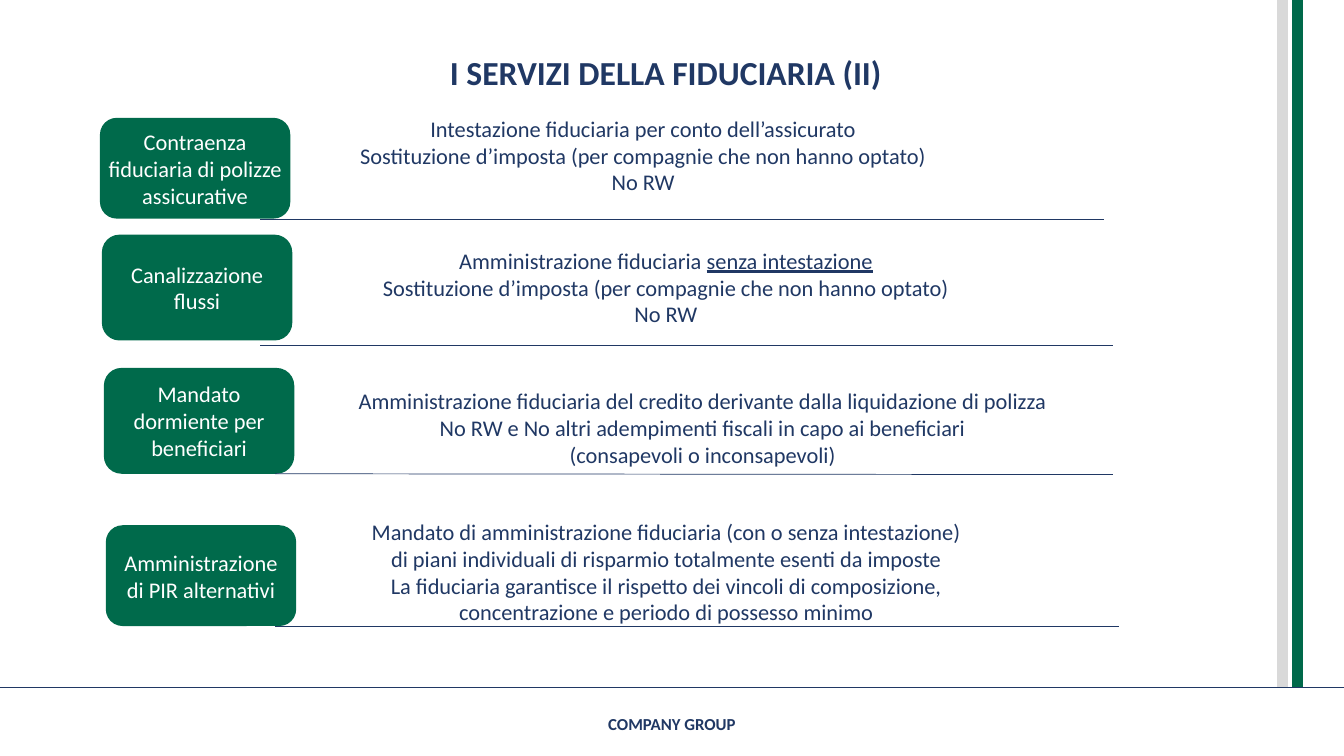
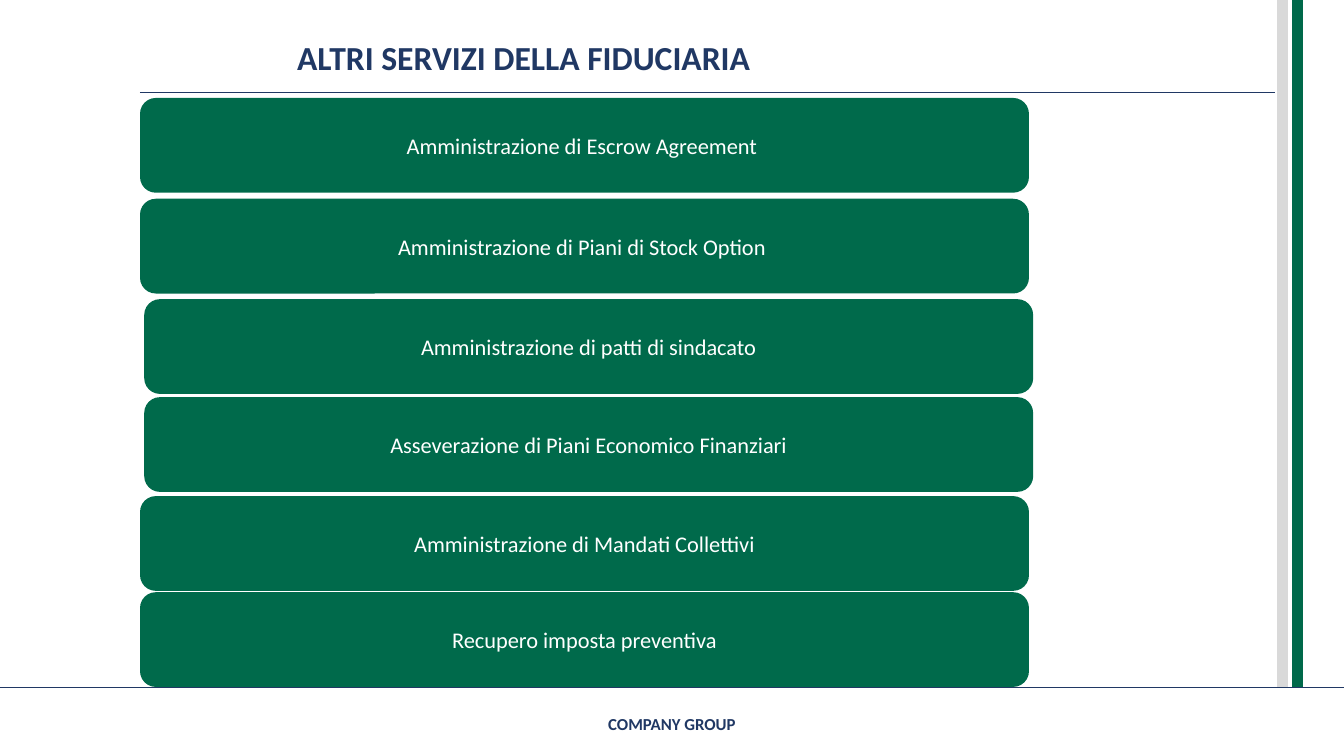
from lxml.etree import SubElement
from pptx import Presentation
from pptx.dml.color import RGBColor
from pptx.enum.shapes import MSO_CONNECTOR as Connector, MSO_SHAPE as Shape
from pptx.enum.text import MSO_ANCHOR as Anchor, PP_ALIGN as Align
from pptx.oxml.ns import qn
from pptx.util import Pt

# Shared style
FONT = "Calibri"
NAVY, GREEN, BAND_GREEN, GREY, WHITE = "203864", "006A4B", "00694A", "D9D9D9", "FFFFFF"
PAGE_WIDTH, PAGE_HEIGHT = 960, 540
FOOTER_TOP = 491
BODY_SIZE, TITLE_SIZE, FOOTER_SIZE = 16, 24, 12

# Service rows: label, button top and height, text box, text, rule (x1, y1, x2, y2).
# A line is a string, or a (plain, underlined) pair.
SERVICES = [
    (["Contraenza fiduciaria di polizze assicurative"], 84.2, 72,
     (243.4, 78.5, 432, 65.5),
     ["Intestazione fiduciaria per conto dell’assicurato",
      "Sostituzione d’imposta (per compagnie che non hanno optato)",
      "No RW"],
     (185.8, 157, 788.4, 157)),
    (["Canalizzazione flussi"], 167.6, 75.6,
     (260, 172.8, 431.3, 81.4),
     [("Amministrazione fiduciaria ", "senza intestazione"),
      "Sostituzione d’imposta (per compagnie che non hanno optato)",
      "No RW"],
     (185.8, 246.5, 795, 246.5)),
    (["Mandato dormiente per beneficiari"], 262.8, 75.6,
     (234, 272.9, 535.7, 65.5),
     ["Amministrazione fiduciaria del credito derivante dalla liquidazione di polizza",
      "No RW e No altri adempimenti fiscali in capo ai beneficiari",
      "(consapevoli o inconsapevoli)"],
     (196.6, 338.4, 795, 339)),
    (["Amministrazione", "di PIR alternativi"], 375.2, 72,
     (221, 366.5, 509.8, 100.8),
     ["Mandato di amministrazione fiduciaria (con o senza intestazione)",
      "di piani individuali di risparmio totalmente esenti da imposte",
      "La fiduciaria garantisce il rispetto dei vincoli di composizione,\v"
      "concentrazione e periodo di possesso minimo"],
     (196.6, 447.6, 799.2, 447.6)),
]

# Bars of the second slide: text, left, top
OTHER_SERVICES = [
    ("Amministrazione di Escrow Agreement ", 100, 70),
    ("Amministrazione di Piani di Stock Option ", 100, 142),
    ("Amministrazione di patti di sindacato", 103, 213.7),
    ("Asseverazione di Piani Economico Finanziari", 103, 283.7),
    ("Amministrazione di Mandati Collettivi", 100, 354.4),
    ("Recupero imposta preventiva", 100, 423),
]


def color(value):
    return RGBColor.from_string(value)


def write(frame, lines, size, tint, bold=False, align=Align.CENTER):
    frame.word_wrap = True
    for index, line in enumerate(lines):
        para = frame.paragraphs[0] if index == 0 else frame.add_paragraph()
        para.alignment = align
        font = para.font
        font.name, font.size, font.bold = FONT, Pt(size), bold
        font.color.rgb = color(tint)
        if isinstance(line, str):
            para.text = line
        else:
            plain, underlined = line
            para.add_run().text = plain
            span = para.add_run()
            span.text = underlined
            span.font.underline = True


def add_text(page, box, lines, size=BODY_SIZE, bold=False, align=Align.CENTER,
             anchor=Anchor.TOP):
    frame = page.shapes.add_textbox(*map(Pt, box)).text_frame
    frame.vertical_anchor = anchor
    write(frame, lines, size, NAVY, bold, align)


def add_title(page, box, text, align=Align.CENTER):
    add_text(page, box, [text], TITLE_SIZE, True, align)


def add_rule(page, x1, y1, x2, y2, tint=NAVY, weight=0.5):
    rule = page.shapes.add_connector(Connector.STRAIGHT, Pt(x1), Pt(y1), Pt(x2), Pt(y2))
    rule.line.color.rgb = color(tint)
    rule.line.width = Pt(weight)
    SubElement(rule.line._get_or_add_ln().getparent(), qn("a:effectLst"))


def add_button(page, box, lines):
    button = page.shapes.add_shape(Shape.ROUNDED_RECTANGLE, *map(Pt, box))
    button.shadow.inherit = False
    button.fill.solid()
    button.fill.fore_color.rgb = color(GREEN)
    button.line.fill.background()
    frame = button.text_frame
    frame.margin_left = frame.margin_right = Pt(1.4)
    frame.margin_top = frame.margin_bottom = Pt(0.7)
    frame.vertical_anchor = Anchor.MIDDLE
    write(frame, lines, BODY_SIZE, WHITE)


def add_page(deck):
    """Blank page with the side bands and the footer."""
    page = deck.slides.add_slide(deck.slide_layouts[6])
    add_rule(page, 0, FOOTER_TOP, PAGE_WIDTH, FOOTER_TOP)
    for x, tint, weight in ((926.7, BAND_GREEN, 8), (916, GREY, 7.75)):
        add_rule(page, x, 0, x, FOOTER_TOP, tint, weight)
    add_text(page, (366, 502.7, 228, 28.8), ["COMPANY GROUP"], FOOTER_SIZE, True,
             anchor=Anchor.MIDDLE)
    return page


def add_services_page(deck):
    page = add_page(deck)
    add_title(page, (196.6, 33.8, 558, 36), "I SERVIZI DELLA FIDUCIARIA (II)")
    for index, (label, top, height, box, lines, rule) in enumerate(SERVICES):
        # Each button steps slightly to the right
        add_button(page, (71.4 + 1.4 * index, top, 136, height), label)
        add_text(page, box, lines)
        add_rule(page, *rule)


def add_other_services_page(deck):
    page = add_page(deck)
    add_title(page, (205.2, 23, 549.4, 36), "ALTRI SERVIZI DELLA FIDUCIARIA", Align.LEFT)
    add_rule(page, 100, 66.2, 910.8, 66.2)
    for text, left, top in OTHER_SERVICES:
        add_button(page, (left, top, 635, 67.7), [text])


def main():
    deck = Presentation()
    deck.slide_width, deck.slide_height = Pt(PAGE_WIDTH), Pt(PAGE_HEIGHT)
    add_services_page(deck)
    add_other_services_page(deck)
    deck.save("out.pptx")


if __name__ == "__main__":
    main()
